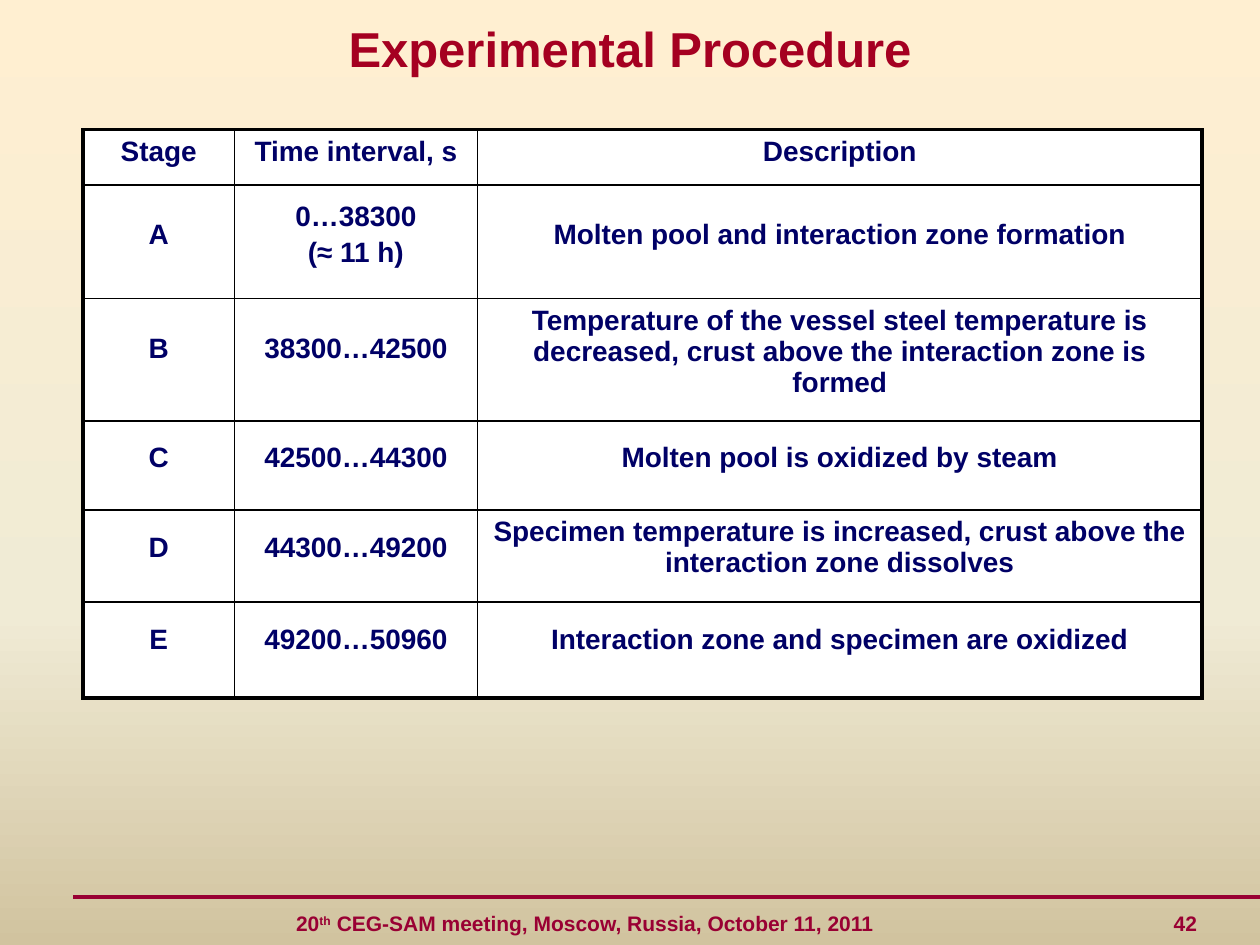
from copy import deepcopy

from lxml import etree
from pptx import Presentation
from pptx.dml.color import RGBColor
from pptx.enum.shapes import MSO_CONNECTOR
from pptx.enum.text import MSO_ANCHOR, PP_ALIGN
from pptx.oxml.ns import qn
from pptx.util import Inches, Pt

CENTER, LEFT = PP_ALIGN.CENTER, PP_ALIGN.LEFT
MIDDLE, TOP = MSO_ANCHOR.MIDDLE, MSO_ANCHOR.TOP
STRAIGHT = MSO_CONNECTOR.STRAIGHT
NAVY, CRIMSON, WINE = "000066", "A50021", "990033"
THICK, THIN = Pt(2.25), Pt(1)


def rgb(value):
    return RGBColor.from_string(value)


def write(frame, text, size=16, color=NAVY, align=CENTER, anchor=TOP, spacing=None):
    """Fill a text frame: newlines split paragraphs, ^ encloses superscripts."""
    frame.word_wrap = True
    frame.vertical_anchor = anchor
    for i, line in enumerate(text.split("\n")):
        paragraph = frame.paragraphs[0] if i == 0 else frame.add_paragraph()
        paragraph.alignment = align
        if i == 0:
            paragraph.line_spacing = spacing
        else:
            paragraph.space_before = Pt(0.2 * size)
        for j, part in enumerate(line.split("^")):
            run = paragraph.add_run()
            run.text = part
            run.font.name, run.font.size, run.font.bold = "Arial", Pt(size), True
            run.font.color.rgb = rgb(color)
            if j % 2:
                run.font._element.set("baseline", "30000")


prs = Presentation()
prs.slide_width, prs.slide_height = Inches(10), Inches(7.5)
slide = prs.slides.add_slide(prs.slide_layouts[5])
shapes = slide.shapes

# Background: cream at the top to sand at the bottom
background = slide.background.fill
background.gradient()
background.gradient_angle = 270
stop_list = background.gradient_stops[0]._gs.getparent()
stop_list.append(deepcopy(stop_list[0]))
for stop, position, color in zip(background.gradient_stops, (0, 0.65, 1),
                                 ("FFEFD1", "F0EBD5", "D1C39F")):
    stop.color.rgb = rgb(color)
    stop.position = position

# Title
title = shapes.title
title.left, title.top, title.width, title.height = 0, 0, prs.slide_width, Inches(0.76)
write(title.text_frame, "Experimental Procedure", size=28, color=CRIMSON, anchor=MIDDLE)

# Table of stages: each text with the line spacing that centres it in its row
columns = (1.2, 1.93, 5.75)
rows = (
    (0.44, (("Stage", 1), ("Time interval, s", 1), ("Description", 1))),
    (0.9, (("A", 1.9), ("0…38300\n(≈\u00a011\u00a0h)", 1.3),
           ("Molten pool and interaction zone formation", 1.9))),
    (0.97, (("B", 1.9), ("38300…42500", 1.9),
            ("Temperature of the vessel steel temperature is decreased, "
             "crust above the interaction zone is formed", 1))),
    (0.71, (("C", 1.5), ("42500…44300", 1.5),
            ("Molten pool is oxidized by steam", 1.5))),
    (0.73, (("D", 1.5), ("44300…49200", 1.5),
            ("Specimen temperature is increased, crust above the "
             "interaction zone dissolves", 1))),
    (0.76, (("E", 1.5), ("49200…50960", 1.5),
            ("Interaction zone and specimen are oxidized", 1.5))),
)
stages = shapes.add_table(len(rows), len(columns), Inches(0.66), Inches(1.03),
                          Inches(sum(columns)),
                          Inches(sum(height for height, _ in rows))).table
stages.first_row = stages.horz_banding = False
for column, width in zip(stages.columns, columns):
    column.width = Inches(width)
for r, (height, entries) in enumerate(rows):
    stages.rows[r].height = Inches(height)
    for c, (text, spacing) in enumerate(entries):
        cell = stages.cell(r, c)
        write(cell.text_frame, text, spacing=spacing)
        cell.vertical_anchor = TOP
        properties = cell._tc.get_or_add_tcPr()
        outer_edges = (("L", c == 0), ("R", c == len(columns) - 1),
                       ("T", r == 0), ("B", r == len(rows) - 1))
        for side, outer in outer_edges:
            border = etree.SubElement(properties, qn("a:ln" + side),
                                      w=str(THICK if outer else THIN))
            ink = etree.SubElement(border, qn("a:solidFill"))
            etree.SubElement(ink, qn("a:srgbClr"), val="000000")
        cell.fill.solid()
        cell.fill.fore_color.rgb = rgb("FFFFFF")

# Footer: rule, meeting and page number at a right tab
rule = shapes.add_connector(STRAIGHT, Inches(0.58), Inches(7.12),
                            prs.slide_width, Inches(7.12))
rule.line.color.rgb = rgb(WINE)
rule.line.width = THICK
etree.SubElement(rule._element.spPr, qn("a:effectLst"))

footer = shapes.add_textbox(Inches(2), Inches(7.08), Inches(7.61), Inches(0.5)).text_frame
footer.margin_left = Inches(0.35)
write(footer, "20^th^ CEG-SAM meeting, Moscow, Russia, October 11, 2011\t42",
      size=12, color=WINE, align=LEFT, anchor=MIDDLE)
tabs = etree.SubElement(footer.paragraphs[0]._p.get_or_add_pPr(), qn("a:tabLst"))
etree.SubElement(tabs, qn("a:tab"), pos=str(Inches(7.15)), algn="r")

prs.save("out.pptx")
